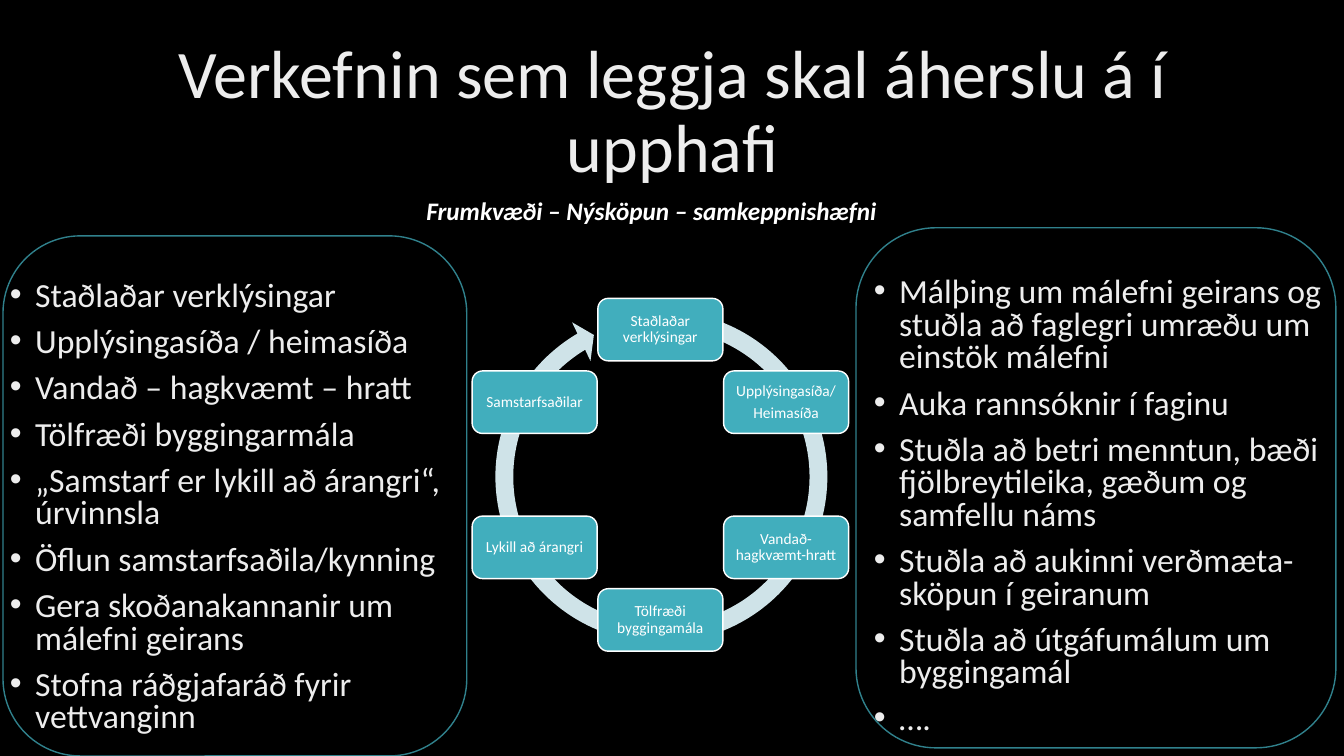
from math import cos, radians, sin

from lxml import etree
from pptx import Presentation
from pptx.dml.color import RGBColor
from pptx.enum.shapes import MSO_SHAPE
from pptx.enum.text import MSO_ANCHOR, PP_ALIGN
from pptx.oxml.ns import qn
from pptx.util import Inches, Pt

ROUNDED = MSO_SHAPE.ROUNDED_RECTANGLE
CIRCULAR_ARROW = MSO_SHAPE.CIRCULAR_ARROW
MIDDLE = MSO_ANCHOR.MIDDLE
LEFT, CENTER = PP_ALIGN.LEFT, PP_ALIGN.CENTER
FONT = "Calibri"
COLORS = {
    "background": "000000",
    "text": "EDEDED",
    "white": "FFFFFF",
    "node": "41AEBD",
    "arrow": "CFE3E8",
    "outline": "30818C",
}


def write_lines(frame, lines, size, color, align=LEFT, spacing=1.0,
                before=0, after=0, bullet=False):
    """Fill a text frame with one equally styled paragraph per line."""
    frame.word_wrap = True
    for index, line in enumerate(lines):
        para = frame.paragraphs[0] if index == 0 else frame.add_paragraph()
        para.text = line
        para.alignment = align
        para.line_spacing = spacing
        para.space_before = Pt(before if index else 0)
        para.space_after = Pt(after)
        if bullet:
            properties = para._p.get_or_add_pPr()
            properties.set("marL", str(Inches(0.25)))
            properties.set("indent", str(Inches(-0.25)))
            etree.SubElement(properties, qn("a:buFont")).set("typeface", "Arial")
            etree.SubElement(properties, qn("a:buChar")).set("char", "•")
        para.font.name = FONT
        para.font.size = Pt(size)
        para.font.color.rgb = RGBColor.from_string(COLORS[color])


def add_plain_shape(kind, left, top, width, height, fill=None, line=None):
    """Add a shadowless preset shape with an optional fill and 1 pt line."""
    shape = page.shapes.add_shape(
        kind, Inches(left), Inches(top), Inches(width), Inches(height))
    shape.shadow.inherit = False
    if fill:
        shape.fill.solid()
        shape.fill.fore_color.rgb = RGBColor.from_string(COLORS[fill])
    else:
        shape.fill.background()
    if line:
        shape.line.color.rgb = RGBColor.from_string(COLORS[line])
        shape.line.width = Pt(1)
    else:
        shape.line.fill.background()
    return shape


deck = Presentation()
deck.slide_width, deck.slide_height = Inches(13.33), Inches(7.5)
page = deck.slides.add_slide(deck.slide_layouts[6])
page.background.fill.solid()
page.background.fill.fore_color.rgb = RGBColor.from_string(COLORS["background"])

# Title
title = page.shapes.add_textbox(Inches(0.92), Inches(0.4), Inches(11.5), Inches(1.45))
title.text_frame.vertical_anchor = MIDDLE
write_lines(title.text_frame, ["Verkefnin sem leggja skal áherslu á í upphafi"],
            48.6, "text", CENTER, 0.9)

# Bullet lists: left, top, width, lines
bullet_lists = [
    (0, 2.74, 5.02, [
        "Staðlaðar verklýsingar",
        "Upplýsingasíða / heimasíða",
        "Vandað – hagkvæmt – hratt",
        "Tölfræði byggingarmála",
        "„Samstarf er lykill að árangri“, úrvinnsla",
        "Öflun samstarfsaðila/kynning",
        "Gera skoðanakannanir um málefni geirans",
        "Stofna ráðgjafaráð fyrir vettvanginn",
    ]),
    (8.57, 2.71, 4.77, [
        "Málþing um málefni geirans og stuðla að faglegri umræðu um einstök málefni",
        "Auka rannsóknir í faginu",
        "Stuðla að betri menntun, bæði fjölbreytileika, gæðum og samfellu náms",
        "Stuðla að aukinni verðmæta-sköpun í geiranum",
        "Stuðla að útgáfumálum um byggingamál",
        "….",
    ]),
]
for left, top, width, lines in bullet_lists:
    box = page.shapes.add_textbox(Inches(left), Inches(top), Inches(width), Inches(4.76))
    write_lines(box.text_frame, lines, 24.1, "text", spacing=0.8, before=10, bullet=True)

# Cycle: nodes sit every 60 degrees, clockwise from the top
ring = add_plain_shape(CIRCULAR_ARROW, 4.79, 2.96, 3.54, 3.54, fill="arrow")
for index, value in enumerate([0.05, 3.13, 143.6, 170.5, 0.06]):
    ring.adjustments[index] = value

center_x, center_y, radius = 6.55, 4.71, 1.44
node_width, node_height = 1.24, 0.62
nodes = [
    ["Staðlaðar verklýsingar"],
    ["Upplýsingasíða/", "Heimasíða"],
    ["Vandað-hagkvæmt-hratt"],
    ["Tölfræði byggingamála"],
    ["Lykill að árangri"],
    ["Samstarfsaðilar"],
]
for index, lines in enumerate(nodes):
    angle = radians(60 * index)
    node = add_plain_shape(
        ROUNDED,
        center_x + radius * sin(angle) - node_width / 2,
        center_y - radius * cos(angle) - node_height / 2,
        node_width, node_height, fill="node", line="white")
    frame = node.text_frame
    frame.vertical_anchor = MIDDLE
    frame.margin_left = frame.margin_right = Inches(0.05)
    frame.margin_top = frame.margin_bottom = Inches(0.05)
    write_lines(frame, lines, 11, "white", CENTER, 0.9, after=3.85)

# Motto
motto = page.shapes.add_textbox(Inches(4.13), Inches(1.89), Inches(4.77), Inches(0.4))
write_lines(motto.text_frame, ["Frumkvæði – Nýsköpun – samkeppnishæfni"], 18, "white")
motto.text_frame.word_wrap = False
motto.text_frame.paragraphs[0].font.bold = True
motto.text_frame.paragraphs[0].font.italic = True

# Frames around the lists
for left, top, width in [(0.03, 2.34, 4.6), (8.49, 2.26, 4.76)]:
    add_plain_shape(ROUNDED, left, top, width, 5.16, line="outline")

deck.save("out.pptx")
